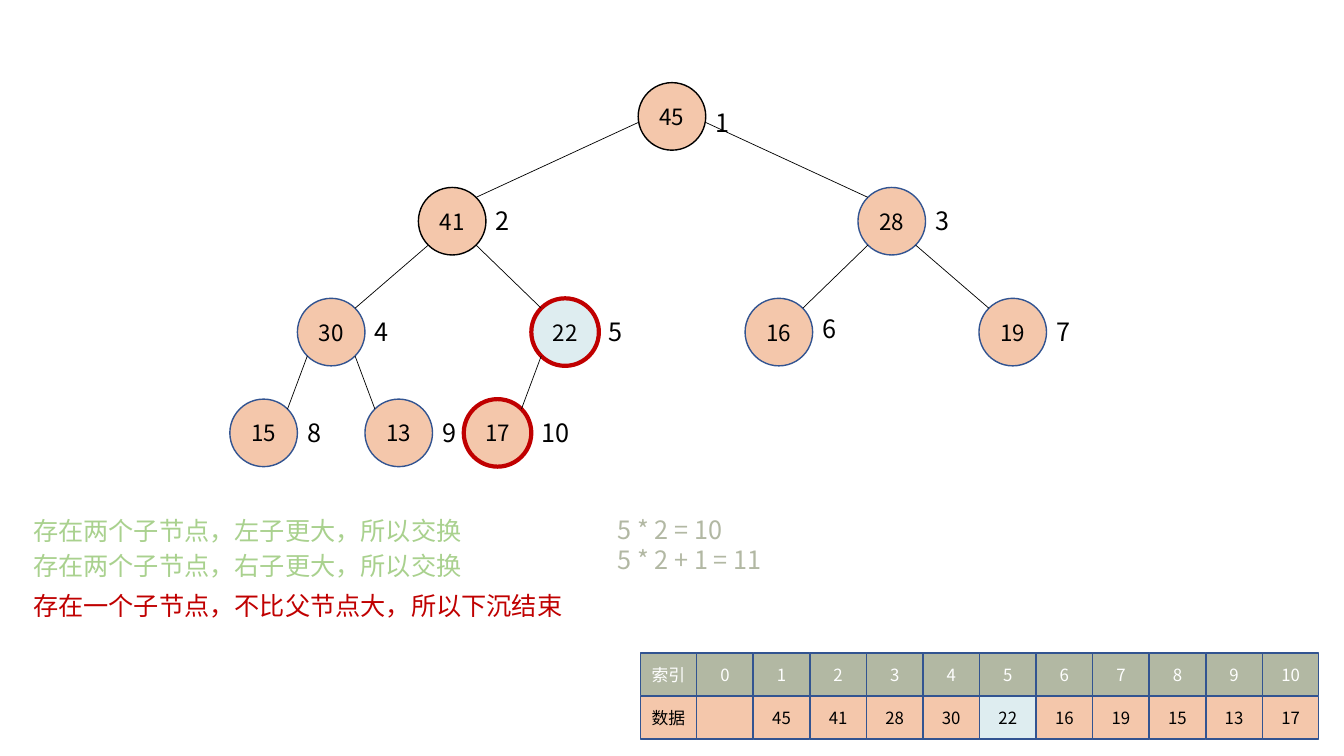
import pptx
import pptx.util
import pptx.dml.color
import pptx.enum.shapes
import pptx.enum.text
import lxml.etree
from pptx.util import Inches

FONT = "Noto Sans CJK SC"
A = "{http://schemas.openxmlformats.org/drawingml/2006/main}"
SHAPE = pptx.enum.shapes.MSO_SHAPE
COLORS = {k: pptx.dml.color.RGBColor.from_string(v) for k, v in {
    "black": "000000", "white": "FFFFFF", "peach": "F4C7AB", "blue": "325491",
    "pale": "DEEDF0", "red": "C00000", "sage": "B2B8A3", "green": "A9D18E"}.items()}

prs = pptx.Presentation()
prs.slide_width, prs.slide_height = Inches(13.33), Inches(7.5)
s = prs.slides.add_slide(prs.slide_layouts[6])


def add_text(sp, lines, size, color, frame, para):
    tf = sp.text_frame
    for name, value in frame.items():
        setattr(tf, name, value)
    for i, line in enumerate(lines):
        p = tf.paragraphs[0] if i == 0 else tf.add_paragraph()
        for name, value in para.items():
            setattr(p, name, value)
        r = p.add_run()
        r.text = line
        r.font.size = pptx.util.Pt(size)
        r.font.name = FONT
        r.font.color.rgb = COLORS[color]
        lxml.etree.SubElement(r.font._element, A + "ea", typeface=FONT)


def add_box(kind, x, y, w, h, fill, line, width, text, size, color):
    sp = s.shapes.add_shape(kind, Inches(x), Inches(y), Inches(w), Inches(h))
    sp.shadow.inherit = False
    sp.fill.solid()
    sp.fill.fore_color.rgb = COLORS[fill]
    sp.line.color.rgb = COLORS[line]
    sp.line.width = pptx.util.Pt(width)
    if text:
        frame = {"margin_left": 0, "margin_right": 0, "margin_top": 0, "margin_bottom": 0,
                 "vertical_anchor": pptx.enum.text.MSO_ANCHOR.MIDDLE}
        add_text(sp, [text], size, color, frame, {"alignment": pptx.enum.text.PP_ALIGN.CENTER})


heap = [45, 41, 28, 30, 22, 16, 19, 15, 13, 17]
lefts = [6.33, 4.15, 8.51, 2.95, 5.27, 7.39, 9.71, 2.28, 3.62, 4.6]
level_tops = [0.82, 1.86, 2.96, 3.96]
D = 0.67
R = D / 2
nodes = {i: (x, level_tops[i.bit_length() - 1]) for i, x in enumerate(lefts, 1)}
node_lines = {1: ("black", 1), 2: ("black", 1), 5: ("red", 3), 10: ("red", 3)}
CURRENT = 5

for i, (x, y) in nodes.items():
    line, width = node_lines.get(i, ("blue", 1))
    fill = "pale" if i == CURRENT else "peach"
    add_box(SHAPE.OVAL, x, y, D, D, fill, line, width, str(heap[i - 1]), 16, "black")

diag = R * 0.707
for child in range(2, len(heap) + 1):
    parent = child // 2
    side = -1 if child % 2 == 0 else 1
    dx, dy = (R, 0.06) if parent == 1 else (diag, diag)
    (px, py), (cx, cy) = nodes[parent], nodes[child]
    edge = s.shapes.add_connector(
        pptx.enum.shapes.MSO_CONNECTOR.STRAIGHT,
        Inches(px + R + side * dx), Inches(py + R + dy),
        Inches(cx + R - side * diag), Inches(cy + R - diag))
    edge.line.color.rgb = COLORS["black"]
    edge.line.width = pptx.util.Pt(0.5)
    lxml.etree.SubElement(edge._element.spPr, A + "effectLst")

label_drops = {1: 0.2, 6: 0.1}
labels = [(x + D, y + label_drops.get(i, 0.13), 0.48 if i == 10 else 0.34, 0.4, [str(i)], "black")
          for i, (x, y) in nodes.items()]
notes = [
    (6.03, 5.05, 1.72, 0.71, ["5 * 2 = 10", "5 * 2 + 1 = 11"], "sage"),
    (0.23, 5.06, 4.49, 0.4, ["存在两个子节点，左子更大，所以交换"], "green"),
    (0.23, 5.41, 4.49, 0.4, ["存在两个子节点，右子更大，所以交换"], "green"),
    (0.23, 5.81, 5.5, 0.4, ["存在一个子节点，不比父节点大，所以下沉结束"], "red"),
]
for x, y, w, h, lines, color in labels + notes:
    tb = s.shapes.add_textbox(Inches(x), Inches(y), Inches(w), Inches(h))
    frame = {"word_wrap": False, "auto_size": pptx.enum.text.MSO_AUTO_SIZE.SHAPE_TO_FIT_TEXT}
    add_text(tb, lines, 18, color, frame, {"line_spacing": pptx.util.Pt(21.6)})

indexes = ["索引"] + [str(i) for i in range(len(heap) + 1)]
values = ["数据", ""] + [str(v) for v in heap]
for col, (index, value) in enumerate(zip(indexes, values)):
    x = 6.35 + 0.561 * col
    fill = "pale" if index == str(CURRENT) else "peach"
    add_box(SHAPE.RECTANGLE, x, 6.48, 0.56, 0.42, "sage", "blue", 1, index, 12, "white")
    add_box(SHAPE.RECTANGLE, x, 6.91, 0.56, 0.42, fill, "blue", 1, value, 12, "black")

prs.save("out.pptx")
